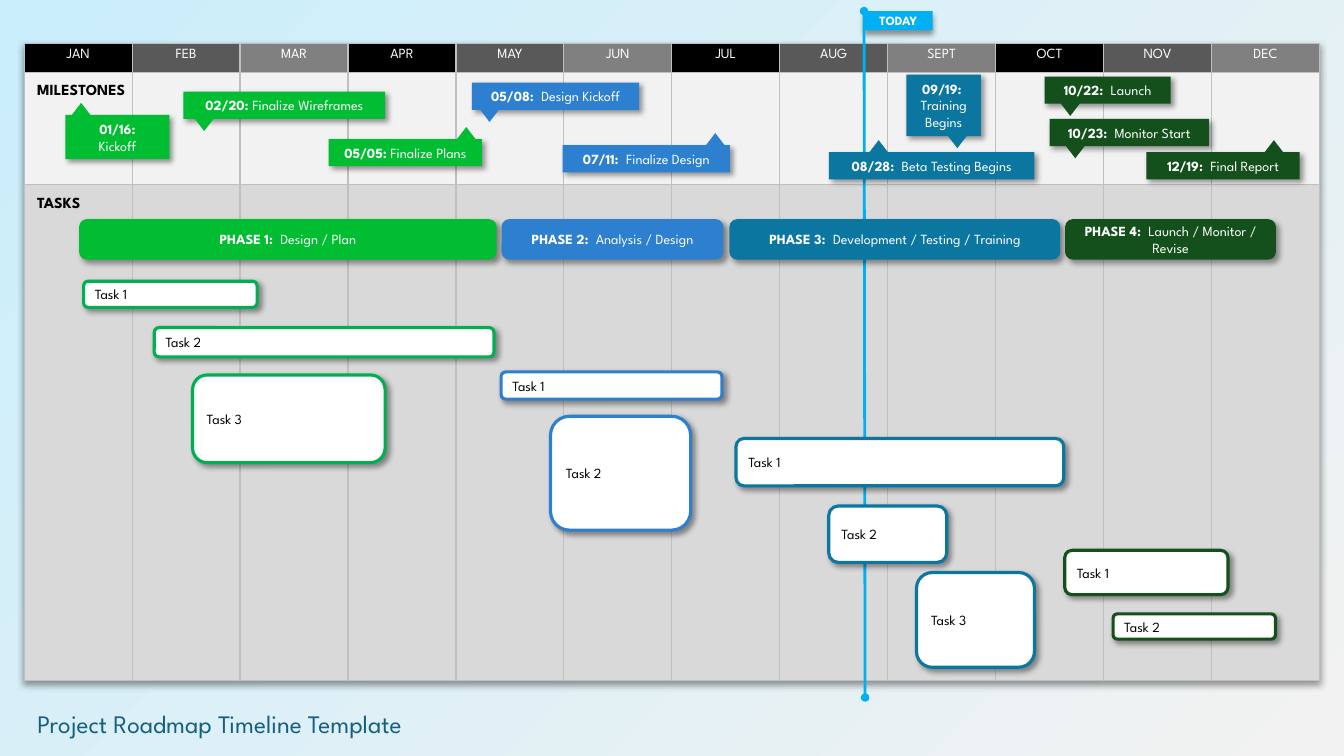
from dataclasses import dataclass
from lxml import etree
from pptx import Presentation
from pptx import util as u
from pptx.dml import color as clr
from pptx.enum import shapes, text
from pptx.oxml import ns

TITLE = "Project Roadmap Timeline Template"
MONTHS = ["JAN", "FEB", "MAR", "APR", "MAY", "JUN",
          "JUL", "AUG", "SEPT", "OCT", "NOV", "DEC"]
LABELS = [("MILESTONES", 0.75), ("TASKS", 1.87)]
PHASES = [
    ("PHASE 1:  ", "Design / Plan", 0.8, 4.11),
    ("PHASE 2:  ", "Analysis / Design", 4.99, 2.17),
    ("PHASE 3:  ", "Development / Testing / Training", 7.25, 3.25),
    ("PHASE 4:  ", "Launch / Monitor / Revise", 10.58, 2.06),
]
TASKS = [
    [(0.83, 2.79, 1.72, 0.26), (1.53, 3.25, 3.37, 0.29), (1.91, 3.72, 1.91, 0.87)],
    [(4.97, 3.69, 2.19, 0.27), (5.46, 4.13, 1.39, 1.13)],
    [(7.3, 4.35, 3.25, 0.47), (8.22, 5.02, 1.17, 0.56), (9.09, 5.68, 1.17, 0.94)],
    [(10.56, 5.46, 1.62, 0.44), (11.04, 6.09, 1.61, 0.25)],
]
MILESTONES = [
    (0, "05/05: ", "Finalize Plans", 1, 3.26, 1.38, 1.52, 4.51, "up"),
    (0, "01/16:", "Kickoff", 2, 0.65, 1.14, 1.03, 0.69, "up"),
    (0, "02/20: ", "Finalize Wireframes", 1, 1.82, 0.91, 2, 1.91, "down"),
    (1, "05/08:  ", "Design Kickoff", 1, 4.68, 0.82, 1.66, 4.74, "down"),
    (1, "07/11:  ", "Finalize Design", 1, 5.58, 1.44, 1.66, 6.98, "up"),
    (2, "09/19:  ", "Training Begins", 3, 8.99, 0.74, 0.74, 9.38, "down"),
    (2, "08/28:  ", "Beta Testing Begins", 1, 8.22, 1.51, 2.04, 8.6, "up"),
    (3, "10/22:  ", "Launch", 1, 10.36, 0.76, 1.25, 10.5, "down"),
    (3, "10/23:  ", "Monitor Start", 1, 10.41, 1.18, 1.58, 10.55, "down"),
    (3, "12/19:  ", "Final Report", 1, 11.37, 1.51, 1.52, 12.52, "up"),
]


@dataclass
class Theme:
    font: str = "League Spartan"
    title: str = "156082"
    today: str = "00B0F0"
    white: str = "FFFFFF"
    black: str = "000000"
    grid: str = "BFBFBF"
    light: str = "F2F2F2"
    sky: str = "CAEEFB"
    lane: str = "D9D9D9"
    heads: tuple = ("000000", "595959", "808080")
    phase: tuple = ("00BD32", "2D7FCF", "0B76A0", "13501B")
    edge: tuple = ("00B050", "2D7FCF", "0B76A0", "13501B")
    big: float = 18
    label: float = 11
    body: float = 10
    flag: float = 9


T = Theme()
MID = text.PP_ALIGN.CENTER
LEFT = text.PP_ALIGN.LEFT
KIND = shapes.MSO_SHAPE


def rgb(code):
    return clr.RGBColor.from_string(code)


def box(*nums):
    return [u.Inches(n) for n in nums]


def node(host, tag, **keys):
    return etree.SubElement(host, ns.qn("a:" + tag), {k: str(v) for k, v in keys.items()})


def tint(host, code):
    return node(node(host, "solidFill"), "srgbClr", val=code)


def shade(host, turn=45):
    cast = node(host, "outerShdw", blurRad=u.Pt(4), dist=u.Pt(3), dir=turn * 60000,
                algn="t", rotWithShape=0)
    node(node(cast, "srgbClr", val=T.black), "alpha", val=40000)


def put(frame, lines, size, code, align=LEFT):
    frame.word_wrap = True
    for i, line in enumerate(lines):
        para = frame.add_paragraph() if i else frame.paragraphs[0]
        para.alignment = align
        for words, bold in line:
            run = para.add_run()
            run.text = words
            run.font.name = T.font
            run.font.size = u.Pt(size)
            run.font.bold = bold
            run.font.color.rgb = rgb(code)


def block(host, kind, place, fill, edge=None, turn=45):
    item = host.add_shape(kind, *box(*place))
    item.fill.solid()
    item.fill.fore_color.rgb = rgb(fill)
    if edge:
        item.line.color.rgb = rgb(edge)
        item.line.width = u.Pt(2.25)
    else:
        item.line.fill.background()
    item.shadow.inherit = False
    if turn is not None:
        shade(item.element.spPr.find(ns.qn("a:effectLst")), turn)
    item.text_frame.vertical_anchor = text.MSO_ANCHOR.MIDDLE
    return item


def backdrop(slide):
    fill = slide.background.fill
    fill.gradient()
    fill.gradient_angle = 135
    for stop, code, pos in zip(fill.gradient_stops, (T.light, T.sky), (0, 1)):
        stop.color.rgb = rgb(code)
        stop.position = pos


def title(slide):
    head = slide.shapes.title
    head.left, head.top, head.width, head.height = box(0.27, 6.98, 12.58, 0.4)
    head.text_frame.vertical_anchor = text.MSO_ANCHOR.TOP
    put(head.text_frame, [[(TITLE, False)]], T.big, T.title)


def calendar(slide):
    grid = slide.shapes.add_table(3, len(MONTHS), *box(0.24, 0.43, 12.85, 6.32)).table
    grid.first_row = grid.horz_banding = False
    look = grid._tbl.tblPr
    cast = node(look, "effectLst")
    look.insert(0, cast)
    shade(cast, 90)
    for row, tall in zip(grid.rows, (0.29, 1.11, 4.92)):
        row.height = u.Inches(tall)
    for c, month in enumerate(MONTHS):
        fills = (T.heads[c % len(T.heads)], T.light, T.lane)
        for r, code in enumerate(fills):
            cell = grid.cell(r, c)
            rim = cell._tc.get_or_add_tcPr()
            for side in ("lnL", "lnR", "lnT", "lnB"):
                tint(node(rim, side, w=u.Pt(1)), T.grid)
            cell.fill.solid()
            cell.fill.fore_color.rgb = rgb(code)
        put(grid.cell(0, c).text_frame, [[(month, False)]], T.body, T.white, MID)


def today(slide):
    group = slide.shapes.add_group_shape().shapes
    flag = block(group, KIND.SNIP_1_RECTANGLE, (8.57, 0.11, 0.68, 0.19), T.today, turn=90)
    flag.adjustments[0] = 0
    put(flag.text_frame, [[("TODAY", True)]], T.flag, T.white, MID)
    line = group.add_connector(shapes.MSO_CONNECTOR.STRAIGHT, *box(8.57, 0.11, 8.58, 6.92))
    line.line.color.rgb = rgb(T.today)
    line.line.width = u.Pt(2)
    pen = line.line._get_or_add_ln()
    for end in ("headEnd", "tailEnd"):
        node(pen, end, type="oval")
    node(line.element.spPr, "effectLst")


def phases(slide):
    for (name, work, x, wide), code in zip(PHASES, T.phase):
        bar = block(slide.shapes, KIND.ROUNDED_RECTANGLE, (x, 2.19, wide, 0.37), code, code)
        put(bar.text_frame, [[(name, True), (work, False)]], T.body, T.white, MID)


def labels(slide):
    for name, y in LABELS:
        tag = slide.shapes.add_textbox(*box(0.27, y, 1.33, 0.29))
        put(tag.text_frame, [[(name, True)]], T.label, T.black)


def milestones(slide):
    for own, date, name, rows, x, y, wide, tip, way in MILESTONES:
        group = slide.shapes.add_group_shape().shapes
        tall = 0.27 + 0.17 * (rows - 1)
        card = block(group, KIND.RECTANGLE, (x, y, wide, tall), T.phase[own])
        frame = card.text_frame
        frame.margin_left = frame.margin_right = u.Inches(0.05)
        day, event = (date, True), (name, False)
        lines = [[day], [event]] if rows == 2 else [[day, event]]
        put(frame, lines, T.body, T.white, MID)
        top = y - 0.12 if way == "up" else y + tall - 0.03
        point = block(group, KIND.ISOSCELES_TRIANGLE, (tip, top, 0.23, 0.15),
                      T.phase[own], turn=None)
        point.rotation = 0 if way == "up" else 180


def tasks(slide):
    for places, code in zip(TASKS, T.edge):
        for n, place in enumerate(places, 1):
            card = block(slide.shapes, KIND.ROUNDED_RECTANGLE, place, T.white, code)
            put(card.text_frame, [[(f"Task {n}", False)]], T.body, T.black)


def main():
    deck = Presentation()
    deck.slide_width, deck.slide_height = box(13.33, 7.5)
    slide = deck.slides.add_slide(deck.slide_layouts[5])
    for draw in (backdrop, title, calendar, today, phases, labels, milestones, tasks):
        draw(slide)
    deck.save("out.pptx")


if __name__ == "__main__":
    main()
